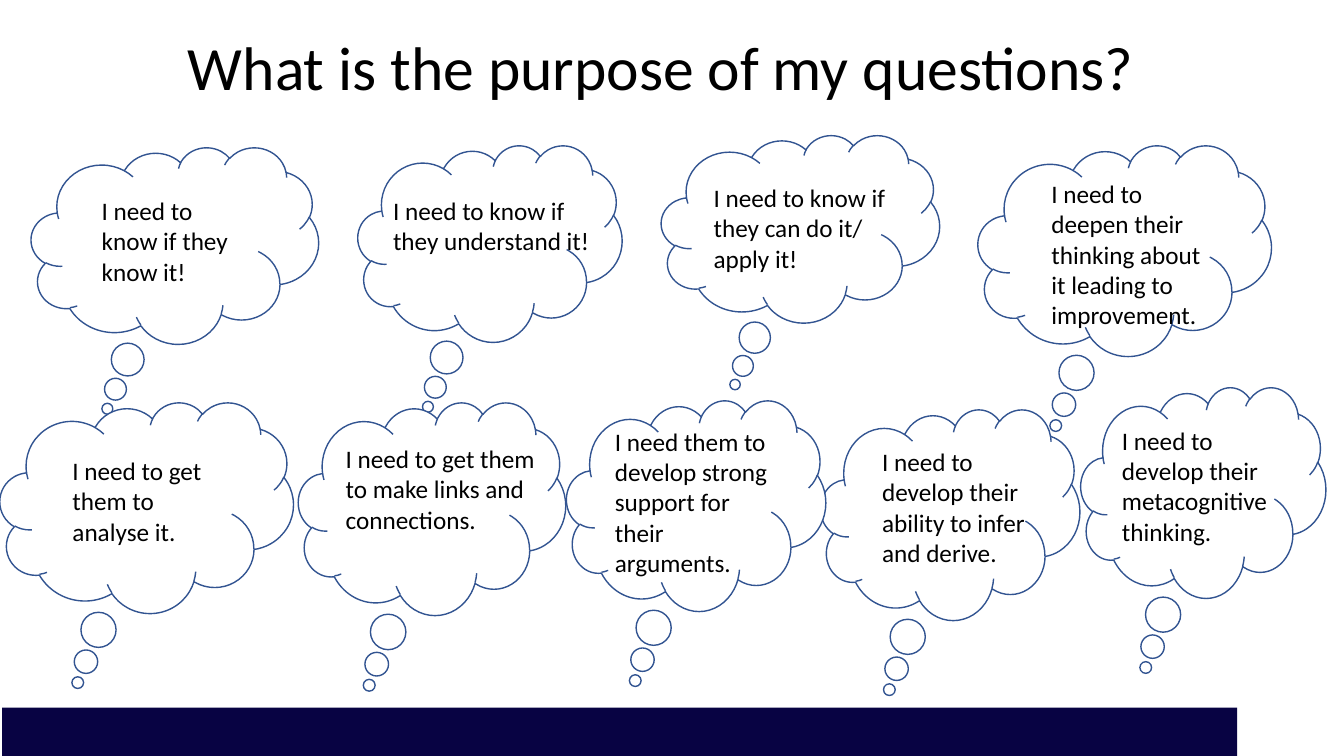
"""Build a slide of thought clouds on the purpose of questions."""
from dataclasses import dataclass
from pptx import Presentation
from pptx.dml.color import RGBColor
from pptx.enum.shapes import MSO_SHAPE
from pptx.enum.text import PP_ALIGN
from pptx.util import Inches, Pt

TITLE = "What is the purpose of my questions?"
TITLE_BOX = (1.56, 0.24, 10, 0.84)
BAR = (0.02, 7.02, 12.25, 0.48)
TAIL = (-0.235, 0.831)
CLOUDS = [
    ("I need to know if they know it!",
     (0.31, 1.46, 2.85, 1.95), (0.91, 1.89, 1.68, 1.05)),
    ("I need to know if they understand it!",
     (3.55, 1.44, 2.62, 1.95), (3.8, 1.89, 2.38, 0.71)),
    ("I need to know if they can do it/ apply it!",
     (6.56, 1.34, 2.76, 1.86), (6.98, 1.76, 2.27, 1.01)),
    ("I need to deepen their thinking about it leading to improvement.",
     (9.7, 1.44, 2.91, 2.09), (10.33, 1.72, 1.82, 1.62)),
    ("I need to get them to analyse it.",
     (0, 3.99, 2.91, 2.09), (0.62, 4.47, 1.52, 1.01)),
    ("I need to get them to make links and connections.",
     (2.96, 3.99, 2.65, 2.11), (3.33, 4.35, 2.08, 1.31)),
    ("I need to develop their ability to infer and derive.",
     (8.14, 4.06, 2.57, 2.09), (8.65, 4.38, 1.69, 1.31)),
    ("I need to develop their metacognitive thinking.",
     (10.72, 3.84, 2.43, 2.09), (11.03, 4.17, 1.83, 1.31)),
    ("I need them to develop strong support for their arguments.",
     (5.62, 3.97, 2.57, 2.09), (6, 4.18, 1.71, 1.62)),
]


@dataclass(frozen=True)
class Theme:
    """Colours, font and sizes."""
    font: str = "Calibri"
    ink: RGBColor = RGBColor(0, 0, 0)
    paper: RGBColor = RGBColor(0xFF, 0xFF, 0xFF)
    edge: RGBColor = RGBColor(0x32, 0x54, 0x91)
    bar: RGBColor = RGBColor(0x08, 0x03, 0x43)
    title: int = 44
    body: int = 18
    line: int = 1


THEME = Theme()


def add_shape(slide, kind, box, fill):
    """Add a filled shape without shadow or line."""
    shape = slide.shapes.add_shape(kind, *map(Inches, box))
    shape.shadow.inherit = False
    shape.fill.solid()
    shape.fill.fore_color.rgb = fill
    shape.line.fill.background()
    return shape


def add_text(slide, text, box, size, align=PP_ALIGN.LEFT):
    """Add a wrapped text box."""
    frame = slide.shapes.add_textbox(*map(Inches, box)).text_frame
    frame.word_wrap = True
    frame.text = text
    para = frame.paragraphs[0]
    para.alignment = align
    font = para.runs[0].font
    font.name, font.size = THEME.font, Pt(size)
    font.color.rgb = THEME.ink


def add_cloud(slide, text, box, label):
    """Add a thought cloud and its label."""
    cloud = add_shape(slide, MSO_SHAPE.CLOUD_CALLOUT, box, THEME.paper)
    for index, value in enumerate(TAIL):
        cloud.adjustments[index] = value
    cloud.line.color.rgb = THEME.edge
    cloud.line.width = Pt(THEME.line)
    add_text(slide, text, label, THEME.body)


def main():
    """Draw and save the slide."""
    deck = Presentation()
    deck.slide_width, deck.slide_height = Inches(13.33), Inches(7.5)
    slide = deck.slides.add_slide(deck.slide_layouts[6])
    add_shape(slide, MSO_SHAPE.RECTANGLE, BAR, THEME.bar)
    for cloud in CLOUDS:
        add_cloud(slide, *cloud)
    add_text(slide, TITLE, TITLE_BOX, THEME.title, PP_ALIGN.CENTER)
    deck.save("out.pptx")


if __name__ == "__main__":
    main()
